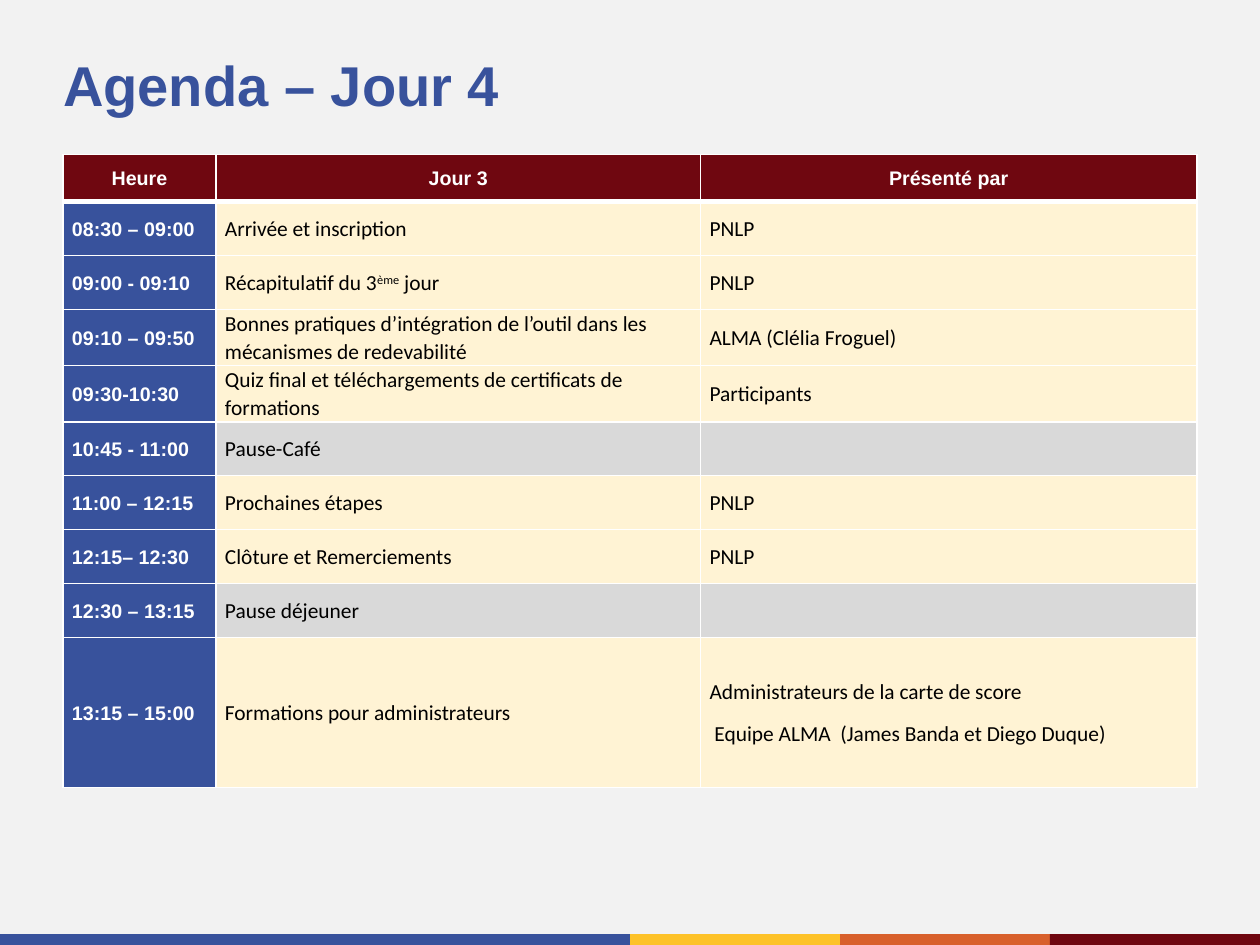
from dataclasses import dataclass

import pptx
import pptx.dml.color
import pptx.enum.shapes
import pptx.enum.text
import pptx.oxml
import pptx.oxml.ns
import pptx.util
from pptx.util import Pt

COLORS = {
    "background": "F2F2F2",
    "blue": "38529C",
    "yellow": "FDC228",
    "orange": "D8602C",
    "maroon": "6F0710",
    "cream": "FFF3D4",
    "gray": "D9D9D9",
    "white": "FFFFFF",
    "black": "000000",
}
SLIDE_WIDTH, SLIDE_HEIGHT = 705.6, 529.2
MARGIN = 35.28
STRIPE_HEIGHT = 6
COLUMN_WIDTHS = (85.68, 271.44, 277.92)
HEADER_HEIGHT = 26.6
HEADINGS = ("Heure", "Jour 3", "Présenté par")


@dataclass(frozen=True)
class Stripe:
    color: str
    share: float


@dataclass(frozen=True)
class Session:
    time: str
    topic: str
    presenter: str = ""
    color: str = "cream"
    height: float = 30.24


@dataclass(frozen=True)
class CellStyle:
    font: str
    size: float
    color: str
    bold: bool
    margin: float = 5.04
    alignment: pptx.enum.text.PP_ALIGN = pptx.enum.text.PP_ALIGN.LEFT


STRIPES = (
    Stripe("blue", 1 / 2),
    Stripe("yellow", 1 / 6),
    Stripe("orange", 1 / 6),
    Stripe("maroon", 1 / 6),
)
# A caret pair marks superscript text.
SESSIONS = (
    Session("08:30 – 09:00", "Arrivée et inscription", "PNLP"),
    Session("09:00 - 09:10", "Récapitulatif du 3^ème^ jour", "PNLP"),
    Session("09:10 – 09:50", "Bonnes pratiques d’intégration de l’outil dans les mécanismes de redevabilité",
            "ALMA (Clélia Froguel)", height=31.4),
    Session("09:30-10:30", "Quiz final et téléchargements de certificats de formations",
            "Participants", height=31.4),
    Session("10:45 - 11:00", "Pause-Café", color="gray"),
    Session("11:00 – 12:15", "Prochaines étapes", "PNLP"),
    Session("12:15– 12:30", "Clôture et Remerciements", "PNLP"),
    Session("12:30 – 13:15", "Pause déjeuner", color="gray"),
    Session("13:15 – 15:00", "Formations pour administrateurs",
            "Administrateurs de la carte de score\n Equipe ALMA  (James Banda et Diego Duque)", height=84),
)
HEADING_STYLE = CellStyle("Arial", 11, "white", True, 3.6, pptx.enum.text.PP_ALIGN.CENTER)
TIME_STYLE = CellStyle("Arial", 11, "white", True)
BODY_STYLE = CellStyle("Calibri", 12, "black", False)


def rgb(name: str) -> pptx.dml.color.RGBColor:
    return pptx.dml.color.RGBColor.from_string(COLORS[name])


def set_font(font, name: str, size: float, color: str, bold: bool) -> None:
    font.name = name
    font.size = Pt(size)
    font.bold = bold
    font.color.rgb = rgb(color)


def add_stripes(slide) -> None:
    left = 0.0
    for stripe in STRIPES:
        width = SLIDE_WIDTH * stripe.share
        shape = slide.shapes.add_shape(
            pptx.enum.shapes.MSO_SHAPE.RECTANGLE,
            Pt(left), Pt(SLIDE_HEIGHT - STRIPE_HEIGHT), Pt(width), Pt(STRIPE_HEIGHT))
        shape.shadow.inherit = False
        shape.fill.solid()
        shape.fill.fore_color.rgb = rgb(stripe.color)
        shape.line.fill.background()
        left += width


def add_title(slide) -> None:
    box = slide.shapes.add_textbox(Pt(MARGIN), Pt(32.4), Pt(sum(COLUMN_WIDTHS)), Pt(34.56))
    frame = box.text_frame
    frame.word_wrap = True
    frame.vertical_anchor = pptx.enum.text.MSO_ANCHOR.MIDDLE
    frame.margin_left = frame.margin_right = frame.margin_top = frame.margin_bottom = 0
    paragraph = frame.paragraphs[0]
    paragraph.text = "Agenda – Jour 4"
    paragraph.line_spacing = 0.9
    set_font(paragraph.font, "Arial", 31.4, "blue", True)


def add_borders(cell, top: float, bottom: float) -> None:
    """Draw white borders; must run before the cell is filled."""
    properties = cell._tc.get_or_add_tcPr()
    for side, width in (("L", 1), ("R", 1), ("T", top), ("B", bottom)):
        properties.append(pptx.oxml.parse_xml(
            f'<a:ln{side} {pptx.oxml.ns.nsdecls("a")} w="{Pt(width)}"><a:solidFill>'
            f'<a:srgbClr val="{COLORS["white"]}"/></a:solidFill></a:ln{side}>'))


def write_cell(cell, text: str, style: CellStyle, fill: str) -> None:
    cell.fill.solid()
    cell.fill.fore_color.rgb = rgb(fill)
    cell.vertical_anchor = pptx.enum.text.MSO_ANCHOR.MIDDLE
    cell.margin_left = cell.margin_right = Pt(style.margin)
    cell.margin_top = cell.margin_bottom = 0
    for index, line in enumerate(text.split("\n")):
        frame = cell.text_frame
        paragraph = frame.add_paragraph() if index else frame.paragraphs[0]
        paragraph.alignment = style.alignment
        paragraph.line_spacing = 1.07
        paragraph.space_after = Pt(8)
        set_font(paragraph.font, style.font, style.size, style.color, style.bold)
        for part_index, part in enumerate(line.split("^")):
            if part:
                run = paragraph.add_run()
                run.text = part
                if part_index % 2:
                    run._r.get_or_add_rPr().set("baseline", "30000")


def add_agenda(slide) -> None:
    heights = [HEADER_HEIGHT] + [session.height for session in SESSIONS]
    table = slide.shapes.add_table(
        len(heights), len(COLUMN_WIDTHS), Pt(MARGIN), Pt(86.4),
        Pt(sum(COLUMN_WIDTHS)), Pt(sum(heights))).table
    table.first_row = table.horz_banding = False
    for column, width in zip(table.columns, COLUMN_WIDTHS):
        column.width = Pt(width)
    for index, (row, height) in enumerate(zip(table.rows, heights)):
        row.height = Pt(height)
        for cell in row.cells:
            add_borders(cell, top=3 if index == 1 else 1, bottom=3 if index == 0 else 1)
    for column, heading in enumerate(HEADINGS):
        write_cell(table.cell(0, column), heading, HEADING_STYLE, "maroon")
    for row, session in enumerate(SESSIONS, start=1):
        write_cell(table.cell(row, 0), session.time, TIME_STYLE, "blue")
        write_cell(table.cell(row, 1), session.topic, BODY_STYLE, session.color)
        write_cell(table.cell(row, 2), session.presenter, BODY_STYLE, session.color)


def main() -> None:
    presentation = pptx.Presentation()
    presentation.slide_width = Pt(SLIDE_WIDTH)
    presentation.slide_height = Pt(SLIDE_HEIGHT)
    slide = presentation.slides.add_slide(presentation.slide_layouts[6])
    slide.background.fill.solid()
    slide.background.fill.fore_color.rgb = rgb("background")
    add_stripes(slide)
    add_title(slide)
    add_agenda(slide)
    presentation.save("out.pptx")


if __name__ == "__main__":
    main()
